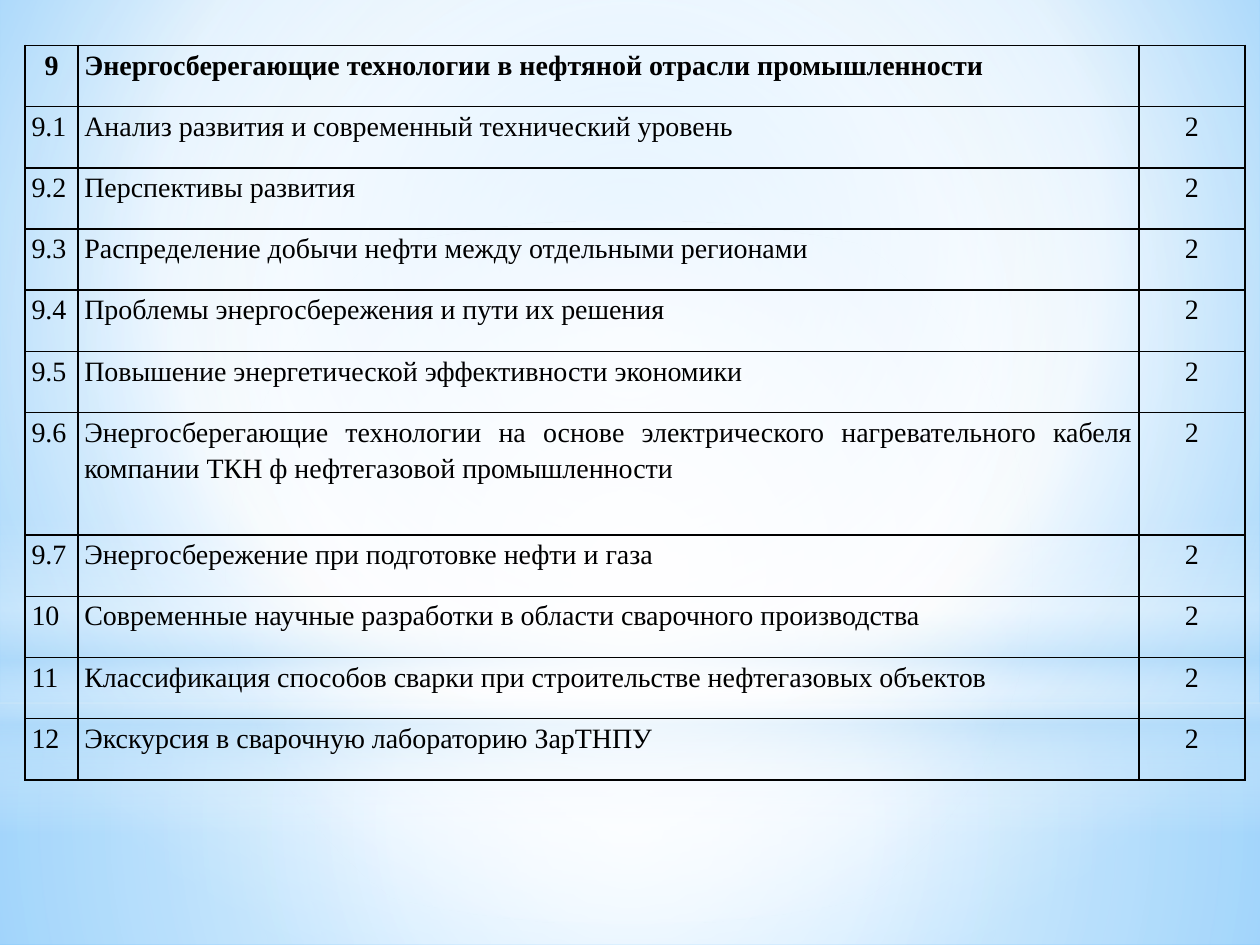
import lxml.etree
import pptx
import pptx.dml.color
import pptx.enum.shapes
import pptx.enum.text
import pptx.oxml
import pptx.oxml.ns
import pptx.util

Inches = pptx.util.Inches
Points = pptx.util.Pt
Align = pptx.enum.text.PP_ALIGN
Preset = pptx.enum.shapes.MSO_SHAPE
RGBColor = pptx.dml.color.RGBColor
qualified = pptx.oxml.ns.qn

BLACK = RGBColor(0x00, 0x00, 0x00)
WHITE = RGBColor(0xFF, 0xFF, 0xFF)
PALE_BLUE = RGBColor(0xB4, 0xDC, 0xFA)
LIGHT_BLUE = RGBColor(0x9E, 0xD5, 0xFF)
SKY_BLUE = RGBColor(0x5B, 0xB9, 0xFF)

FONT = "Times New Roman"
HEADING = ("9", "Энергосберегающие технологии в нефтяной отрасли промышленности", "")
TOPICS = [
    ("9.1", "Анализ развития и современный технический уровень"),
    ("9.2", "Перспективы развития"),
    ("9.3", "Распределение добычи нефти между отдельными регионами"),
    ("9.4", "Проблемы энергосбережения и пути их решения"),
    ("9.5", "Повышение энергетической эффективности экономики"),
    ("9.6", "Энергосберегающие технологии на основе электрического нагревательного "
            "кабеля компании ТКН ф нефтегазовой промышленности"),
    ("9.7", "Энергосбережение при подготовке нефти и газа"),
    ("10", "Современные научные разработки в области сварочного производства"),
    ("11", "Классификация способов сварки при строительстве нефтегазовых объектов"),
    ("12", "Экскурсия в сварочную лабораторию ЗарТНПУ"),
]
HOURS = "2"
ROWS = [HEADING] + [(number, topic, HOURS) for number, topic in TOPICS]

TABLE_LEFT, TABLE_TOP, TABLE_HEIGHT = 0.2, 0.36, 5.83
COLUMN_WIDTHS = (0.42, 8.42, 0.84)
TWO_LINE_ROW = 6

# Gradient stops: position %, colour, opacity %
BACKGROUND_STOPS = [(0, LIGHT_BLUE, 100), (60, WHITE, 100), (100, SKY_BLUE, 100)]
BACKGROUND_FOCUS = (20, 10, 20, 60)
CENTRE = (50, 50, 50, 50)
# Preset, top, height, stops, focus (None means a vertical linear gradient)
BACKDROP = [
    (Preset.RECTANGLE, 5.58, 1.92,
     [(0, WHITE, 91), (37, WHITE, 76), (100, PALE_BLUE, 79)], CENTRE),
    (Preset.RECTANGLE, 0, 5.58,
     [(0, WHITE, 89), (48, WHITE, 62), (100, PALE_BLUE, 79)], CENTRE),
    (Preset.RECTANGLE, 4.12, 2.5,
     [(0, WHITE, 0), (29, WHITE, 30), (45, PALE_BLUE, 40),
      (55, WHITE, 26), (65, PALE_BLUE, 60), (100, WHITE, 0)], None),
    (Preset.OVAL, 1.75, 5.58, [(0, WHITE, 100), (56, WHITE, 0)], CENTRE),
]


def add_child(parent, tag, **attributes):
    values = {name: str(value) for name, value in attributes.items()}
    return lxml.etree.SubElement(parent, qualified(tag), values)


def set_gradient(fill, owner, stops, focus):
    """Fill with stops that carry opacity; owner is the element holding the fill."""
    fill.solid()
    fill.fore_color.rgb = WHITE
    solid = next(owner.iter(qualified("a:solidFill")))
    gradient = pptx.oxml.parse_xml(
        f'<a:gradFill {pptx.oxml.ns.nsdecls("a")} rotWithShape="1"/>')
    stop_list = add_child(gradient, "a:gsLst")
    for position, color, opacity in stops:
        stop = add_child(stop_list, "a:gs", pos=position * 1000)
        stop_color = add_child(stop, "a:srgbClr", val=color)
        if opacity < 100:
            add_child(stop_color, "a:alpha", val=opacity * 1000)
    if focus:
        shading = add_child(gradient, "a:path", path="circle")
        sides = {side: share * 1000 for side, share in zip("ltrb", focus)}
        add_child(shading, "a:fillToRect", **sides)
    else:
        add_child(gradient, "a:lin", ang=90 * 60000, scaled=0)
    solid.getparent().replace(solid, gradient)


def add_backdrop(presentation, slide):
    """Build the gradient panels and place them on the slide master."""
    master = presentation.slide_master
    set_gradient(master.background.fill, master.element, BACKGROUND_STOPS, BACKGROUND_FOCUS)
    for index, (preset, top, height, stops, focus) in enumerate(BACKDROP):
        panel = slide.shapes.add_shape(
            preset, 0, Inches(top), presentation.slide_width, Inches(height))
        panel.shadow.inherit = False
        set_gradient(panel.fill, panel.element.spPr, stops, focus)
        panel.line.fill.background()
        master.shapes.element.insert(2 + index, panel.element)


def set_borders(cell):
    properties = cell._tc.get_or_add_tcPr()
    for index, tag in enumerate(("a:lnL", "a:lnR", "a:lnT", "a:lnB")):
        border = add_child(properties, tag, w=Points(1))
        add_child(add_child(border, "a:solidFill"), "a:srgbClr", val=BLACK)
        properties.insert(index, border)


def fill_cell(cell, text, centred, bold):
    cell.fill.background()
    set_borders(cell)
    cell.margin_left = cell.margin_right = Inches(0.05)
    cell.margin_top = cell.margin_bottom = 0
    cell.text_frame.text = text
    paragraph = cell.text_frame.paragraphs[0]
    paragraph.alignment = Align.CENTER if centred else Align.JUSTIFY
    paragraph.line_spacing = 1.15
    for run in paragraph.runs:
        run.font.name = FONT
        run.font.size = Points(16)
        run.font.bold = bold
        run.font.color.rgb = BLACK


def add_plan_table(slide):
    line_counts = [2 if row == TWO_LINE_ROW else 1 for row in range(len(ROWS))]
    table = slide.shapes.add_table(
        len(ROWS), len(COLUMN_WIDTHS), Inches(TABLE_LEFT), Inches(TABLE_TOP),
        Inches(sum(COLUMN_WIDTHS)), Inches(TABLE_HEIGHT)).table
    table.first_row = table.horz_banding = False
    for column, width in zip(table.columns, COLUMN_WIDTHS):
        column.width = Inches(width)
    for row_index, (row, lines) in enumerate(zip(table.rows, line_counts)):
        row.height = Inches(TABLE_HEIGHT * lines / sum(line_counts))
        is_heading = row_index == 0
        for column_index, text in enumerate(ROWS[row_index]):
            centred = column_index == 2 or (is_heading and column_index == 0)
            fill_cell(row.cells[column_index], text, centred, is_heading)


def main():
    presentation = pptx.Presentation()
    presentation.slide_width, presentation.slide_height = Inches(10), Inches(7.5)
    slide = presentation.slides.add_slide(presentation.slide_layouts.get_by_name("Blank"))
    add_backdrop(presentation, slide)
    add_plan_table(slide)
    presentation.save("out.pptx")


if __name__ == "__main__":
    main()
